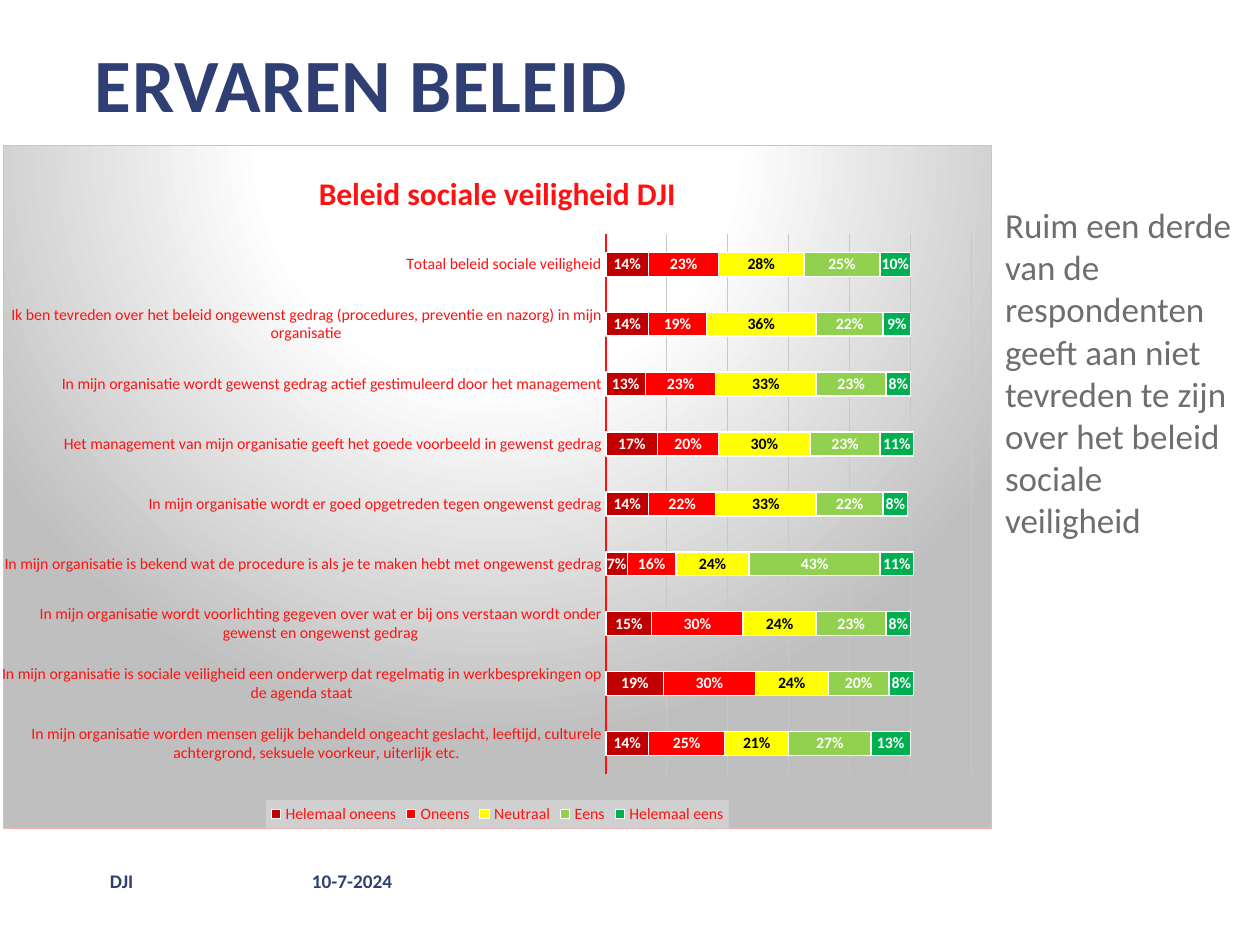
import pptx
import pptx.chart.data
import pptx.dml.color
import pptx.enum.chart
import pptx.enum.text
import pptx.oxml
import pptx.oxml.ns
import pptx.util

PX = 914400 / 126
FONT = "Calibri"
COLORS = {
    "navy": "2F3F73", "grey": "6E6E6E", "red": "FF1111", "pink": "FFB0B0",
    "white": "FFFFFF", "black": "000000", "silver": "BFBFBF",
    "grid": "C8C8C8", "legend": "D0D0D0",
}
CATEGORIES = [
    "In mijn organisatie worden mensen gelijk behandeld ongeacht geslacht, leeftijd, "
    "culturele achtergrond, seksuele voorkeur, uiterlijk etc.",
    "In mijn organisatie is sociale veiligheid een onderwerp dat regelmatig in "
    "werkbesprekingen op de agenda staat",
    "In mijn organisatie wordt voorlichting gegeven over wat er bij ons verstaan wordt "
    "onder gewenst en ongewenst gedrag",
    "In mijn organisatie is bekend wat de procedure is als je te maken hebt met "
    "ongewenst gedrag",
    "In mijn organisatie wordt er goed opgetreden tegen ongewenst gedrag",
    "Het management van mijn organisatie geeft het goede voorbeeld in gewenst gedrag",
    "In mijn organisatie wordt gewenst gedrag actief gestimuleerd door het management",
    "Ik ben tevreden over het beleid ongewenst gedrag (procedures, preventie en nazorg) "
    "in mijn organisatie",
    "Totaal beleid sociale veiligheid",
]
# name, bar colour, label colour, percentages
ANSWERS = [
    ("Helemaal oneens", "C00000", "white", [14, 19, 15, 7, 14, 17, 13, 14, 14]),
    ("Oneens", "FF0000", "white", [25, 30, 30, 16, 22, 20, 23, 19, 23]),
    ("Neutraal", "FFFF00", "black", [21, 24, 24, 24, 33, 30, 33, 36, 28]),
    ("Eens", "92D050", "white", [27, 20, 23, 43, 22, 23, 23, 22, 25]),
    ("Helemaal eens", "00B050", "white", [13, 8, 8, 11, 8, 11, 8, 9, 10]),
]
# left, top, width, height, text, size, colour, bold, wrap, anchor
TEXTS = [
    (110, 868, 189, 26, "DJI", 11, "navy", True, True, "MIDDLE"),
    (312, 868, 164, 26, "10-7-2024", 11, "navy", True, False, "MIDDLE"),
    (95, 37, 794, 152, "ERVAREN BELEID", 43, "navy", True, False, "TOP"),
    (1005, 204, 230, 338, "Ruim een derde van de respondenten geeft aan niet tevreden "
     "te zijn over het beleid sociale veiligheid", 20, "grey", False, True, "TOP"),
]


def set_font(font, size, color, bold=False):
    font.name = FONT
    font.size = pptx.util.Pt(size)
    font.bold = bold
    font.color.rgb = pptx.dml.color.RGBColor.from_string(COLORS[color])


def chart_xml(tag, body):
    """Return a chart element with the given inner XML."""
    ns = pptx.oxml.ns.nsdecls("c", "a")
    return pptx.oxml.parse_xml(f"<c:{tag} {ns}>{body}</c:{tag}>")


prs = pptx.Presentation()
prs.slide_width = pptx.util.Inches(10)
prs.slide_height = pptx.util.Inches(7.5)
s = prs.slides.add_slide(prs.slide_layouts[6])

for left, top, width, height, text, size, color, bold, wrap, anchor in TEXTS:
    box = [round(n * PX) for n in (left, top, width, height)]
    tf = s.shapes.add_textbox(*box).text_frame
    tf.margin_left = tf.margin_right = tf.margin_top = tf.margin_bottom = 0
    tf.word_wrap = wrap
    tf.vertical_anchor = pptx.enum.text.MSO_ANCHOR[anchor]
    r = tf.paragraphs[0].add_run()
    r.text = text
    set_font(r.font, size, color, bold)
    if size == 43:
        r._r.get_or_add_rPr().set("spc", "40")

# Stacked bar chart
data = pptx.chart.data.CategoryChartData(number_format="0%")
data.categories = CATEGORIES
for name, fill, label_color, percentages in ANSWERS:
    data.add_series(name, [n / 100 for n in percentages])
box = [round(n * PX) for n in (2, 145, 990, 684)]
chart = s.shapes.add_chart(
    pptx.enum.chart.XL_CHART_TYPE.BAR_STACKED, *box, data).chart
set_font(chart.font, 10, "red")

p = chart.chart_title.text_frame.paragraphs[0]
r = p.add_run()
r.text = "Beleid sociale veiligheid DJI"
set_font(r.font, 18, "red", True)
chart.chart_title.include_in_layout = False

plot = chart.plots[0]
plot.gap_width = 150
plot.overlap = 100
plot.vary_by_categories = False
for series, (name, fill, label_color, percentages) in zip(plot.series, ANSWERS):
    series.format.fill.solid()
    series.format.fill.fore_color.rgb = pptx.dml.color.RGBColor.from_string(fill)
    line = series.format.line
    line.width = pptx.util.Pt(0.75)
    line.color.rgb = pptx.dml.color.RGBColor.from_string(COLORS["white"])
    labels = series.data_labels
    labels.show_value = True
    labels.number_format = "0%"
    labels.number_format_is_linked = False
    labels.position = pptx.enum.chart.XL_LABEL_POSITION.CENTER
    set_font(labels.font, 9, label_color, True)

axis = chart.category_axis
axis.major_tick_mark = pptx.enum.chart.XL_TICK_MARK.NONE
set_font(axis.tick_labels.font, 9, "red")
axis.format.line.width = pptx.util.Pt(1.5)
axis.format.line.color.rgb = pptx.dml.color.RGBColor.from_string(COLORS["red"])

axis = chart.value_axis
axis.minimum_scale, axis.maximum_scale, axis.major_unit = 0, 1.2, 0.2
axis.has_major_gridlines = True
grid = axis.major_gridlines.format.line
grid.width = pptx.util.Pt(0.75)
grid.color.rgb = pptx.dml.color.RGBColor.from_string(COLORS["grid"])
axis.visible = False

chart.has_legend = True
legend = chart.legend
legend.position = pptx.enum.chart.XL_LEGEND_POSITION.BOTTOM
legend.include_in_layout = False
set_font(legend.font, 9, "red")

# Legend background, plot position, and chart background
qn = pptx.oxml.ns.qn
legend._element.find(qn("c:txPr")).addprevious(chart_xml(
    "spPr", f'<a:solidFill><a:srgbClr val="{COLORS["legend"]}"/></a:solidFill>'))

area = chart._chartSpace.chart.plotArea
for layout in area.findall(qn("c:layout")):
    area.remove(layout)
place = "".join(f'<c:{tag} val="{val}"/>' for tag, val in [
    ("layoutTarget", "inner"), ("xMode", "edge"), ("yMode", "edge"),
    ("x", 0.61), ("y", 0.13), ("w", 0.37), ("h", 0.79)])
area.insert(0, chart_xml("layout", f"<c:manualLayout>{place}</c:manualLayout>"))

stops = "".join(
    f'<a:gs pos="{pos * 1000}"><a:srgbClr val="{COLORS[color]}"/></a:gs>'
    for pos, color in [(0, "white"), (39, "white"), (100, "silver")])
chart._chartSpace.chart.addnext(chart_xml(
    "spPr",
    f'<a:gradFill><a:gsLst>{stops}</a:gsLst><a:path path="circle">'
    '<a:fillToRect l="50000" t="-80000" r="50000" b="180000"/></a:path></a:gradFill>'
    f'<a:ln w="9525"><a:solidFill><a:srgbClr val="{COLORS["pink"]}"/></a:solidFill></a:ln>'))

prs.save("out.pptx")
